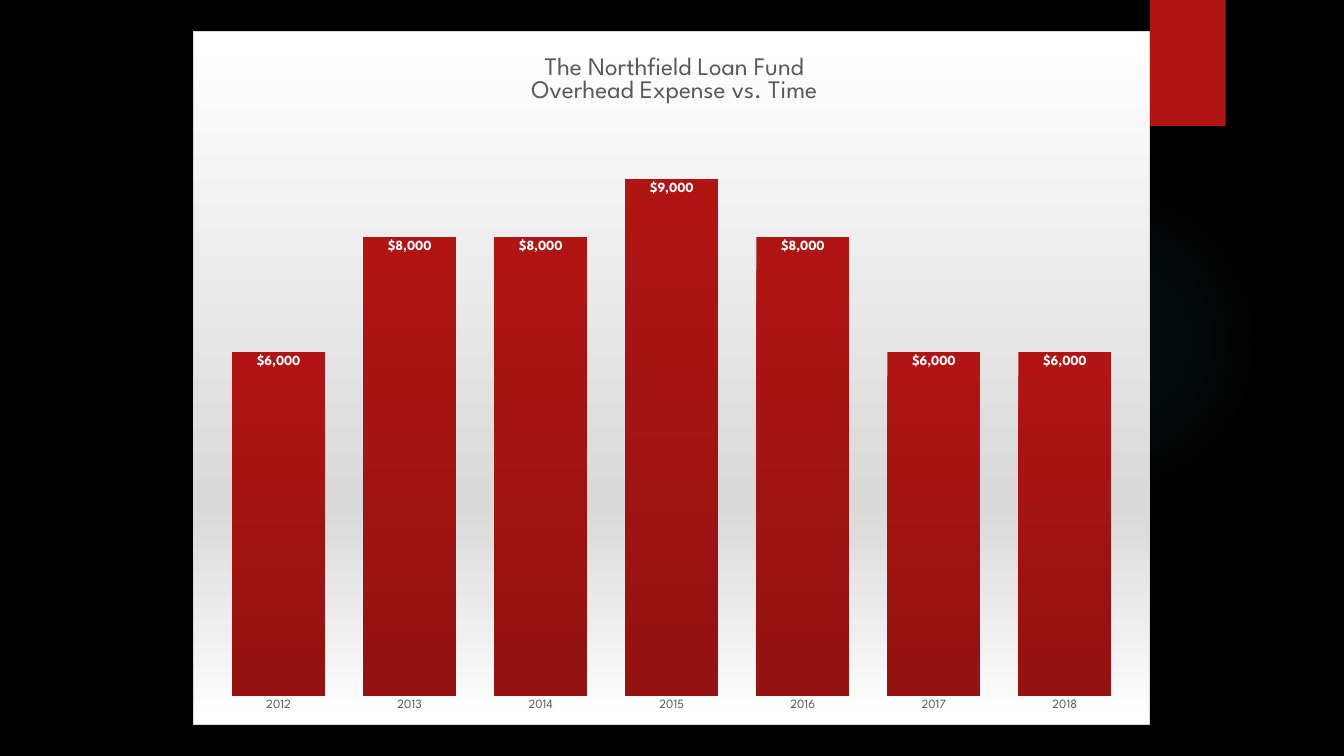
"""Build the slide with the loan fund's yearly overhead expense chart."""
from lxml import etree
from pptx import Presentation
from pptx.chart.data import CategoryChartData
from pptx.dml.color import RGBColor
from pptx.enum.chart import XL_CHART_TYPE as ChartType
from pptx.enum.chart import XL_LABEL_POSITION as LabelPosition
from pptx.enum.chart import XL_TICK_MARK as TickMark
from pptx.enum.shapes import MSO_SHAPE as Shape
from pptx.oxml import parse_xml
from pptx.oxml.ns import nsdecls, qn
from pptx.util import Pt

BLACK = RGBColor(0x00, 0x00, 0x00)
WHITE = RGBColor(0xFF, 0xFF, 0xFF)
GRAY = RGBColor(0x59, 0x59, 0x59)
SILVER = RGBColor(0xD9, 0xD9, 0xD9)
RED = RGBColor(0xB0, 0x15, 0x13)
DARK_RED = RGBColor(0x94, 0x12, 0x10)
TEAL = RGBColor(0x50, 0xB9, 0xC1)
FONT = "League Spartan"

TITLE_LINES = ["The Northfield Loan Fund", "Overhead Expense vs. Time"]
OVERHEAD = {"2012": 6000, "2013": 8000, "2014": 8000, "2015": 9000,
            "2016": 8000, "2017": 6000, "2018": 6000}

GLOW_BOX = (677.5, 131.8, 221.8, 221.8)
TAB_BOX = (821.5, 0, 54, 90)
CHART_BOX = (138.2, 22.3, 683.3, 495.4)
TITLE_SPOT = {"x": 0.35, "y": 0.03}
PLOT_SPOT = {"x": 0.02, "y": 0.13, "w": 0.96, "h": 0.83}

GLOW_STOPS = [(0, TEAL, 7), (36, TEAL, 6), (69, TEAL, 0)]
PANEL_STOPS = [(0, WHITE, 100), (68, SILVER, 100), (100, WHITE, 100)]
BAR_STOPS = [(0, RED, 100), (100, DARK_RED, 100)]
DOWNWARD = '<a:lin ang="5400000" scaled="0"/>'
RADIAL = ('<a:path path="circle"><a:fillToRect l="50000" t="50000" '
          'r="50000" b="50000"/></a:path>')

TITLE_STYLE = {"name": FONT, "size": Pt(18), "bold": False}
YEAR_STYLE = {"name": FONT, "size": Pt(9), "bold": False}
AMOUNT_STYLE = {"name": FONT, "size": Pt(10), "bold": True}


def points(box):
    return [Pt(length) for length in box]


def style(font, values, color):
    for key, value in values.items():
        setattr(font, key, value)
    font.color.rgb = color


def gradient(stops, direction):
    marks = "".join(
        f'<a:gs pos="{position * 1000}"><a:srgbClr val="{color}">'
        f'<a:alpha val="{opacity * 1000}"/></a:srgbClr></a:gs>'
        for position, color, opacity in stops)
    return parse_xml(f'<a:gradFill {nsdecls("a")} rotWithShape="1">'
                     f'<a:gsLst>{marks}</a:gsLst>{direction}</a:gradFill>')


def paint(properties, stops, direction):
    solid = properties.find(qn("a:solidFill"))
    properties.replace(solid, gradient(stops, direction))


def place(part, spot):
    for old in part.findall(qn("c:layout")):
        part.remove(old)
    layout = etree.Element(qn("c:layout"))
    manual = etree.SubElement(layout, qn("c:manualLayout"))
    if "w" in spot:
        etree.SubElement(manual, qn("c:layoutTarget"), val="inner")
    for axis in "xy":
        etree.SubElement(manual, qn(f"c:{axis}Mode"), val="edge")
    for key, value in spot.items():
        etree.SubElement(manual, qn(f"c:{key}"), val=str(value))
    text = part.find(qn("c:tx"))
    part.insert(0 if text is None else 1, layout)


def add_block(slide, kind, box, color):
    block = slide.shapes.add_shape(kind, *points(box))
    block.shadow.inherit = False
    block.fill.solid()
    block.fill.fore_color.rgb = color
    block.line.fill.background()
    return block


def add_overhead_chart(slide):
    data = CategoryChartData(number_format='"$"#,##0')
    data.categories = list(OVERHEAD)
    data.add_series("Series 1", list(OVERHEAD.values()))
    chart = slide.shapes.add_chart(
        ChartType.COLUMN_CLUSTERED, *points(CHART_BOX), data).chart
    chart.has_legend = False
    style(chart.font, AMOUNT_STYLE, WHITE)

    heading = chart.chart_title.text_frame
    heading.text = "\n".join(TITLE_LINES)
    for line in heading.paragraphs:
        for run in line.runs:
            style(run.font, TITLE_STYLE, GRAY)
    chart.chart_title.include_in_layout = False

    years = chart.category_axis
    years.major_tick_mark = TickMark.NONE
    years.format.line.fill.background()
    style(years.tick_labels.font, YEAR_STYLE, GRAY)
    dollars = chart.value_axis
    dollars.minimum_scale, dollars.maximum_scale = 0, 10000
    dollars.has_major_gridlines = False
    dollars.visible = False

    bars = chart.plots[0]
    bars.gap_width = 41
    bars.vary_by_categories = False
    overhead = bars.series[0]
    overhead.format.fill.solid()
    paint(overhead.format.fill._xPr, BAR_STOPS, DOWNWARD)
    amounts = overhead.data_labels
    amounts.show_value = True
    amounts.position = LabelPosition.INSIDE_END
    amounts.number_format = '"$"#,##0'
    amounts.number_format_is_linked = False
    style(amounts.font, AMOUNT_STYLE, WHITE)

    space = chart._chartSpace
    place(space.chart.find(qn("c:title")), TITLE_SPOT)
    place(space.chart.plotArea, PLOT_SPOT)
    panel = parse_xml(
        f'<c:spPr {nsdecls("c", "a")}><a:solidFill/><a:ln w="9525"><a:solidFill>'
        f'<a:srgbClr val="{SILVER}"/></a:solidFill></a:ln></c:spPr>')
    paint(panel, PANEL_STOPS, DOWNWARD)
    space.chart.addnext(panel)


def main():
    deck = Presentation()
    deck.slide_width, deck.slide_height = Pt(960), Pt(540)
    slide = deck.slides.add_slide(deck.slide_layouts[6])
    slide.background.fill.solid()
    slide.background.fill.fore_color.rgb = BLACK
    glow = add_block(slide, Shape.OVAL, GLOW_BOX, TEAL)
    paint(glow.fill._xPr, GLOW_STOPS, RADIAL)
    add_block(slide, Shape.RECTANGLE, TAB_BOX, RED)
    add_overhead_chart(slide)
    deck.save("out.pptx")


if __name__ == "__main__":
    main()
